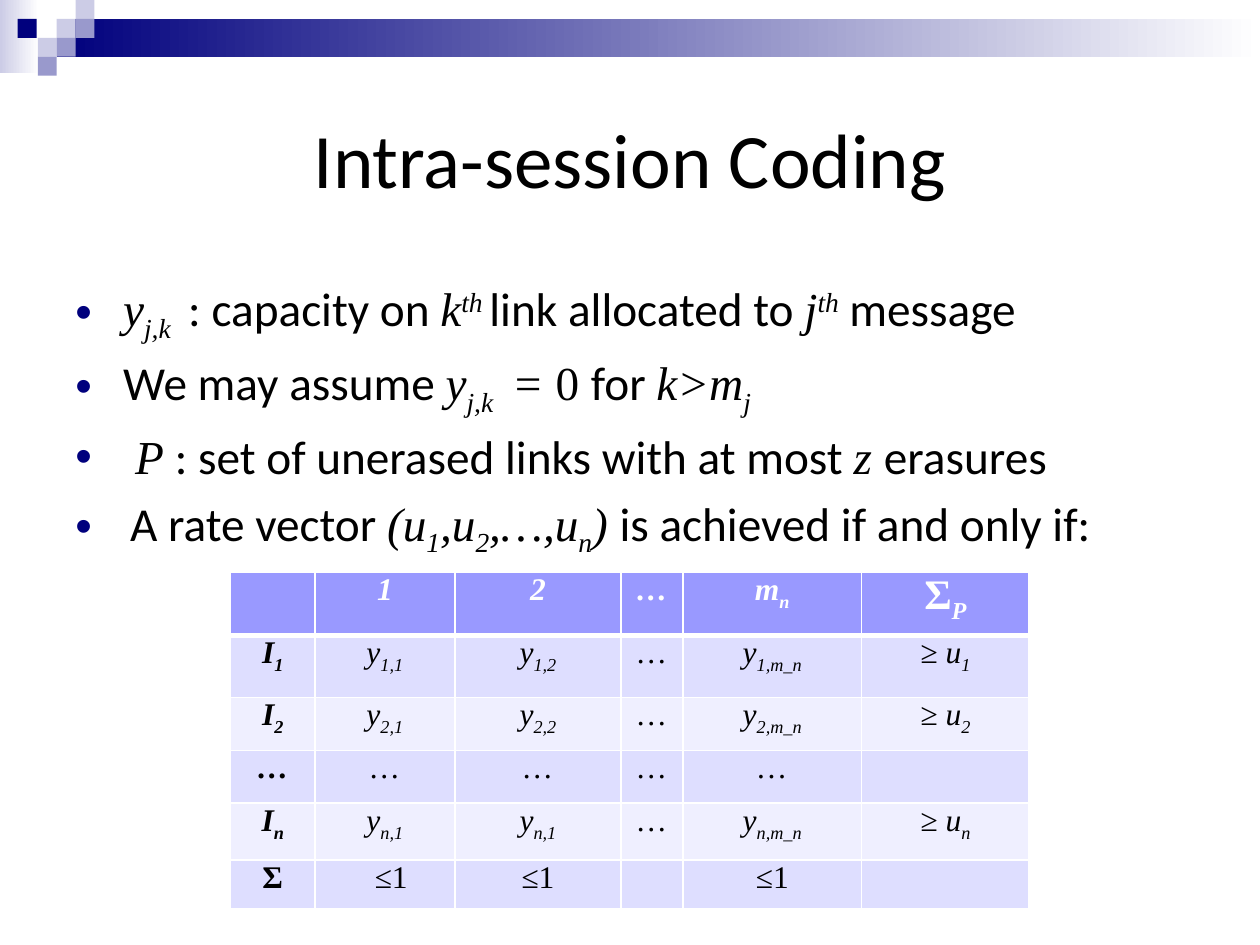
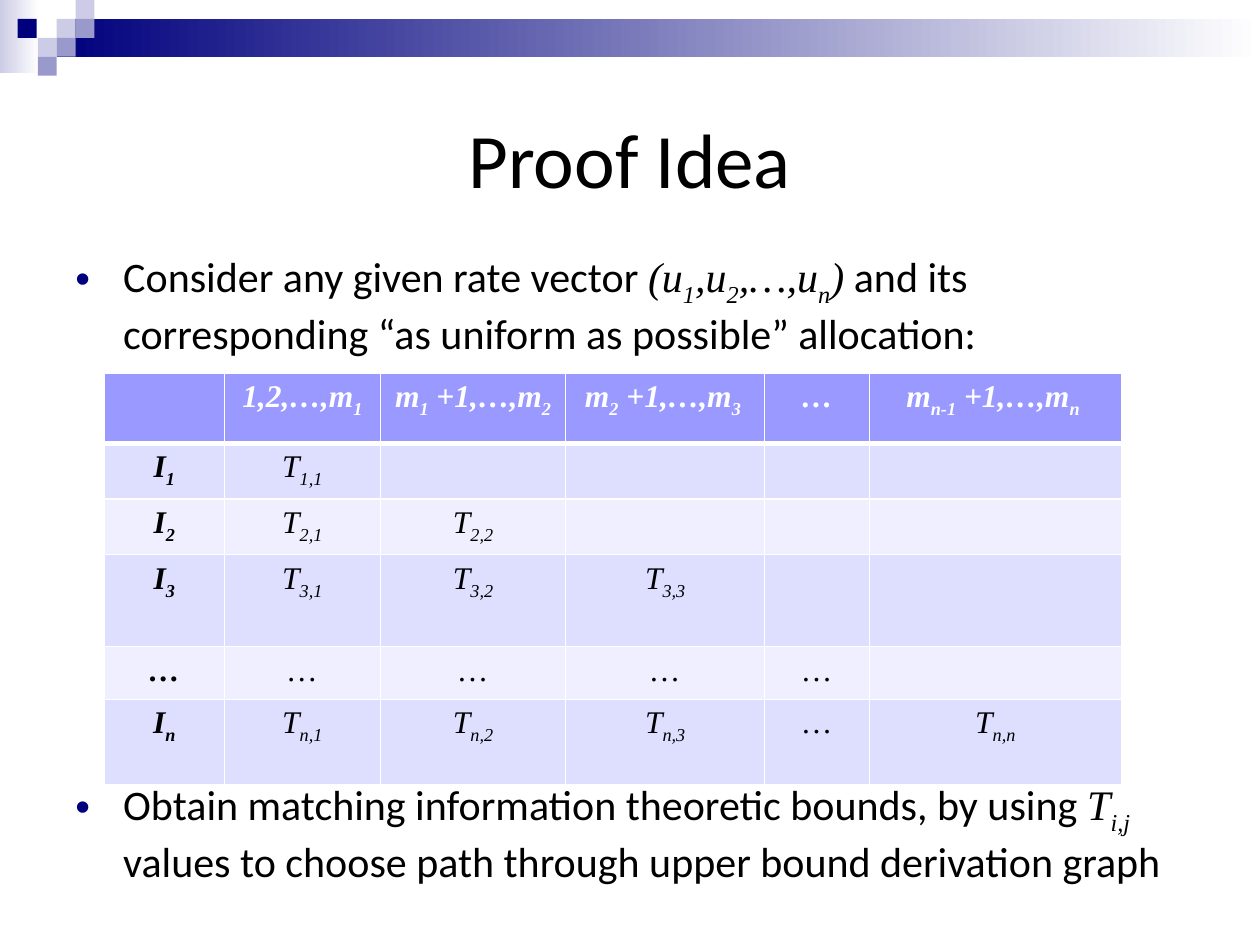
from pptx import Presentation
from pptx.dml.color import RGBColor
from pptx.enum.shapes import MSO_SHAPE
from pptx.enum.text import MSO_ANCHOR, PP_ALIGN
from pptx.oxml.ns import qn
from pptx.util import Inches, Pt
from lxml.etree import SubElement

COLORS = {
    "black": "000000",
    "white": "FFFFFF",
    "navy": "00007D",
    "mid": "9999CC",
    "pale": "CCCCE6",
    "head": "9999FF",
    "odd": "DEDEFF",
    "even": "EFEFFF",
}
SANS, SERIF = "Calibri", "Times New Roman"
MARKS = {
    "~": (SERIF, True, 0),
    "=": (SERIF, False, 0),
    "_": (SERIF, True, -25),
    "^": (SERIF, True, 30),
}
UNIT = 0.15
TILES = [
    (3, 1, "pale"),
    (4, 0, "pale"),
    (4, 1, "mid"),
    (2, 2, "pale"),
    (3, 2, "mid"),
    (2, 3, "mid"),
]


def color(name):
    return RGBColor.from_string(COLORS[name])


class Deck:
    def __init__(self):
        self.prs = Presentation()
        self.prs.slide_width = Inches(10)
        self.prs.slide_height = Inches(7.5)
        self.slide = None

    def page(self, title):
        self.slide = self.prs.slides.add_slide(self.prs.slide_layouts[6])
        self.rect(0, 0, 0.31, 0.58, "pale", "white")
        self.rect(3 * UNIT, UNIT, 9.55, 2 * UNIT, "navy", "white")
        for col, row, tone in TILES:
            self.rect(col * UNIT, row * UNIT, UNIT, UNIT, tone)
        self.rect(0.14, UNIT, UNIT, UNIT, "navy")
        frame = self.box(0.5, 0.5, 9, 1.5)
        frame.vertical_anchor = MSO_ANCHOR.MIDDLE
        para = frame.paragraphs[0]
        para.alignment = PP_ALIGN.CENTER
        self.runs(para, title, 44)

    def rect(self, x, y, w, h, tone, end=None):
        shape = self.slide.shapes.add_shape(
            MSO_SHAPE.RECTANGLE, Inches(x), Inches(y), Inches(w), Inches(h))
        shape.shadow.inherit = False
        shape.line.fill.background()
        if end:
            shape.fill.gradient()
            shape.fill.gradient_angle = 0
            for stop, name in zip(shape.fill.gradient_stops, (tone, end)):
                stop.color.rgb = color(name)
        else:
            shape.fill.solid()
            shape.fill.fore_color.rgb = color(tone)

    def box(self, x, y, w, h):
        frame = self.slide.shapes.add_textbox(
            Inches(x), Inches(y), Inches(w), Inches(h)).text_frame
        frame.word_wrap = True
        return frame

    def runs(self, para, text, size, tone="black", bold=False, base=(SANS, False, 0)):
        for part in text.split("|"):
            face, slant, shift = MARKS.get(part[:1], base)
            run = para.add_run()
            run.text = part[1:] if part[:1] in MARKS else part
            font = run.font
            font.name, font.size = face, Pt(size)
            font.italic, font.bold = slant, bold
            font.color.rgb = color(tone)
            if shift:
                run._r.get_or_add_rPr().set("baseline", str(shift * 1000))

    def bullets(self, top, height, size, items):
        frame = self.box(0.5, top, 9, height)
        for i, item in enumerate(items):
            para = frame.add_paragraph() if i else frame.paragraphs[0]
            para.space_before = Pt(size * 0.2)
            props = para._p.get_or_add_pPr()
            props.set("marL", str(Inches(0.38)))
            props.set("indent", str(Inches(-0.38)))
            tint = SubElement(props, qn("a:buClr"))
            SubElement(tint, qn("a:srgbClr"), val=COLORS["navy"])
            SubElement(props, qn("a:buFont"), typeface="Arial")
            SubElement(props, qn("a:buChar"), char="•")
            self.runs(para, item, size)

    def edges(self, cell, row):
        props = cell._tc.get_or_add_tcPr()
        thick = {"T": row == 1, "B": row == 0}
        for side in "LRTB":
            width = Pt(3 if thick.get(side) else 1)
            line = SubElement(props, qn("a:ln" + side), w=str(width))
            fill = SubElement(line, qn("a:solidFill"))
            SubElement(fill, qn("a:srgbClr"), val=COLORS["white"])

    def table(self, x, y, cols, rows, cells, inset):
        table = self.slide.shapes.add_table(
            len(rows), len(cols), Inches(x), Inches(y),
            Inches(sum(cols)), Inches(sum(rows))).table
        table.first_row = table.horz_banding = False
        for col, width in zip(table.columns, cols):
            col.width = Inches(width)
        for r, line in enumerate(cells):
            table.rows[r].height = Inches(rows[r])
            tone = "head" if r == 0 else "odd" if r % 2 else "even"
            for c, text in enumerate(line):
                cell = table.cell(r, c)
                self.edges(cell, r)
                cell.fill.solid()
                cell.fill.fore_color.rgb = color(tone)
                cell.margin_top = Inches(inset)
                para = cell.text_frame.paragraphs[0]
                para.alignment = PP_ALIGN.CENTER
                if text:
                    size = 24 if text == "=Σ|_P" else 18
                    ink = "black" if r else "white"
                    self.runs(para, text, size, ink, r == 0 or c == 0, MARKS["~"])


def coding(deck):
    deck.page("Intra-session Coding")
    deck.bullets(2.17, 4.25, 27, [
        "~y|_j,k | : capacity on |~k|^th |link allocated to |~j|^th| message",
        "We may assume |~y|_j,k |~ =|= 0 |for |~k>m|_j",
        "~ P |: set of unerased links with at most |~z |erasures",
        "_ |A rate vector |~(u|_1|~,u|_2|~,…,u|_n|~) |is achieved if and only if:",
    ])

    def rate(n):
        second = 1 if n == "n" else 2
        return [f"I|_{n}", f"y|_{n},1", f"y|_{n},{second}", "…",
                f"y|_{n},m_n", f"≥ u|_{n}"]

    deck.table(
        1.83, 4.54,
        [0.67, 1.11, 1.32, 0.49, 1.42, 1.33],
        [0.44, 0.49, 0.42, 0.42, 0.45, 0.39],
        [
            ["", "1", "2", "…", "m|_n", "=Σ|_P"],
            rate(1),
            rate(2),
            ["…"] * 5 + [""],
            rate("n"),
            ["=Σ", "_ | ≤|=1", "≤|=1", "", "≤|=1", ""],
        ], 0)


def proof(deck):
    deck.page("Proof Idea")
    deck.bullets(1.94, 1, 24, [
        "Consider any given rate vector |~(u|_1|~,u|_2|~,…,u|_n|~)"
        "| and its corresponding “as uniform as possible” allocation:",
    ])

    def terms(n, count):
        line = [f"I|_{n}"] + [f"T|_{n},{k}" for k in range(1, count + 1)]
        return line + [""] * (6 - len(line))

    last = terms("n", 3)
    last[4:] = ["…", "T|_n,n"]
    deck.table(
        0.83, 2.96,
        [0.95, 1.24, 1.47, 1.58, 0.83, 2],
        [0.56, 0.42, 0.42, 0.73, 0.42, 0.68],
        [
            ["", "1,2,…,m|_1", "m|_1| +1,…,m|_2 ", "m|_2| +1,…,m|_3 ",
             "…", "m|_n-1| +1,…,m|_n "],
            *[terms(n, n) for n in (1, 2, 3)],
            ["…"] * 5 + [""],
            last,
        ], 0.05)
    deck.bullets(6.13, 1, 24, [
        "Obtain matching information theoretic bounds, by using |~T|_i,j "
        "|values to choose path through upper bound derivation graph",
    ])


def main():
    deck = Deck()
    coding(deck)
    proof(deck)
    deck.prs.save("out.pptx")


if __name__ == "__main__":
    main()
